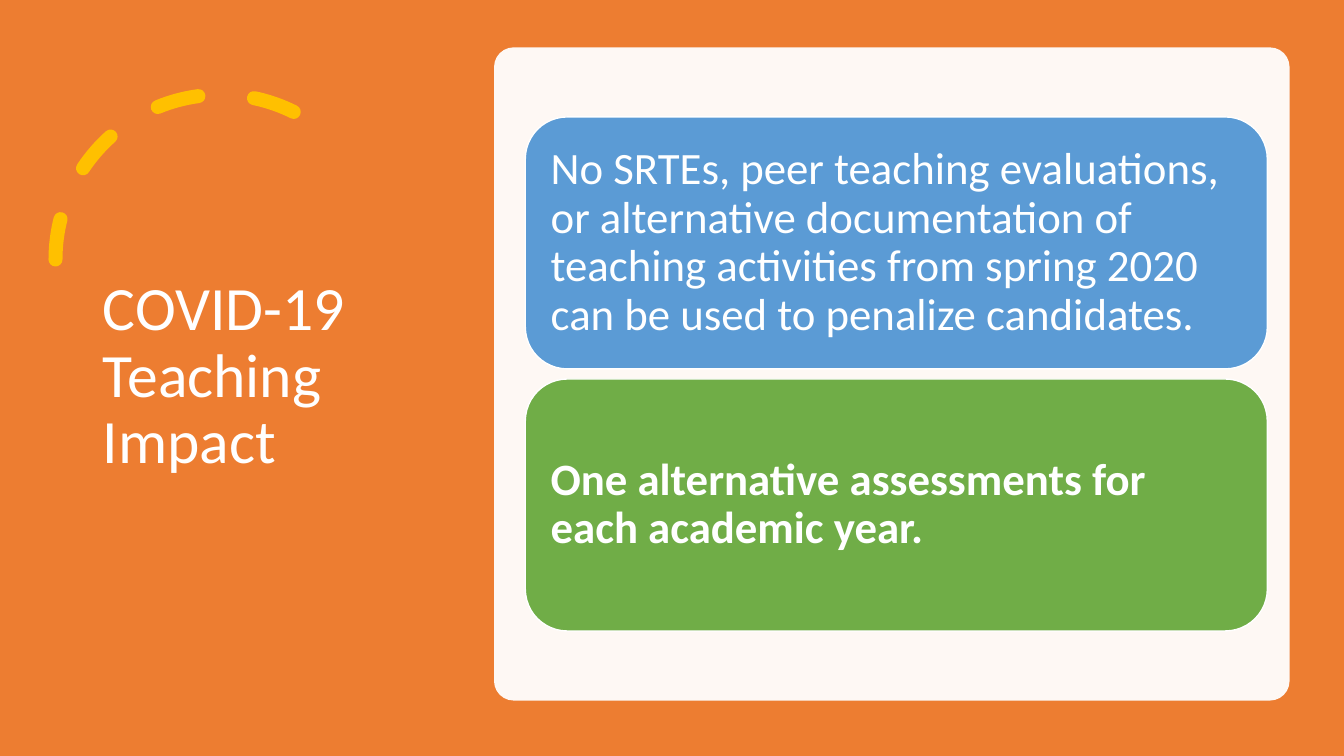
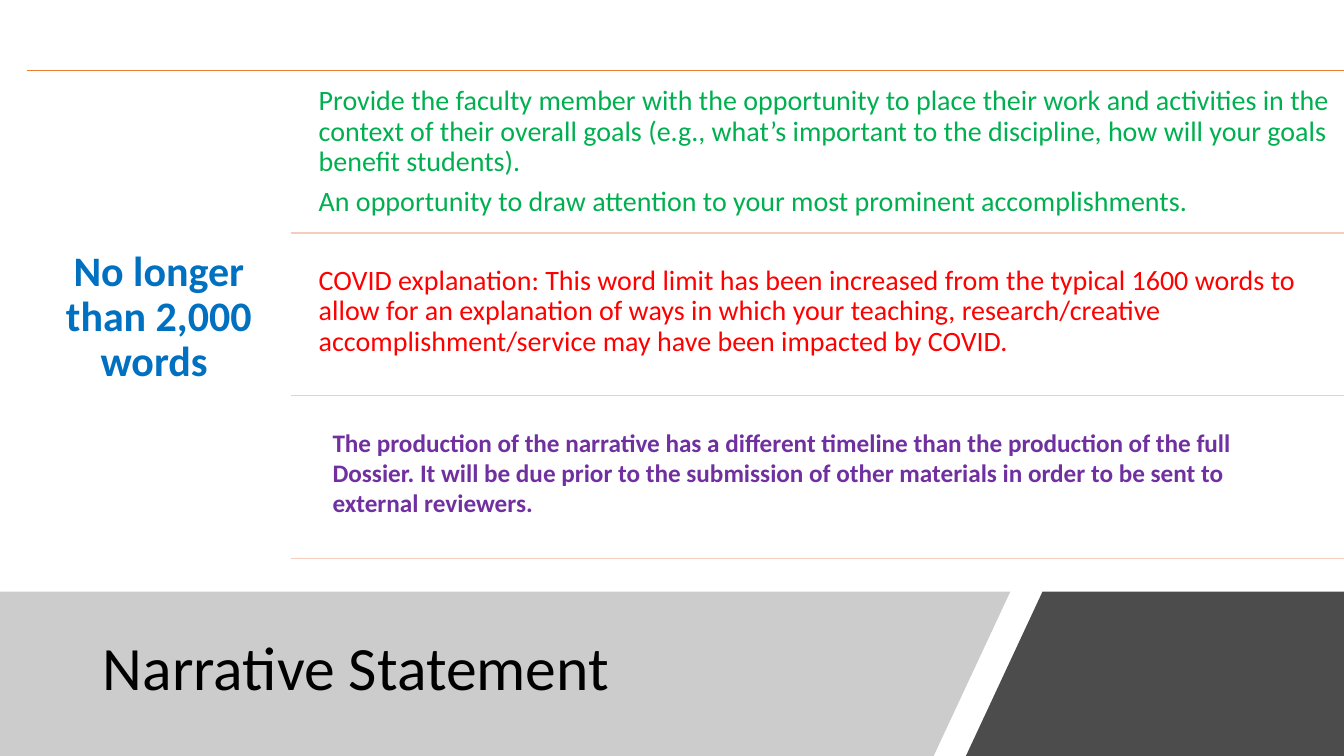
from pptx import Presentation
from pptx.dml.color import RGBColor as Rgb
from pptx.enum.dml import MSO_LINE as Dash
from pptx.enum.shapes import MSO_CONNECTOR as Join, MSO_SHAPE as Kind
from pptx.enum.text import MSO_ANCHOR as Anchor, MSO_AUTO_SIZE as Fit, PP_ALIGN as Align
from pptx.oxml.ns import qn
from pptx.oxml.xmlchemy import OxmlElement as Node
from pptx.util import Inches, Pt

WHITE = Rgb(0xFF, 0xFF, 0xFF)
BLACK = Rgb(0x00, 0x00, 0x00)
GRAY = Rgb(0x80, 0x80, 0x80)
ORANGE = Rgb(0xED, 0x7D, 0x31)
GOLD = Rgb(0xFF, 0xC0, 0x00)
SKY = Rgb(0x5B, 0x9B, 0xD5)
LEAF = Rgb(0x70, 0xAD, 0x47)
BLUE = Rgb(0x00, 0x70, 0xC0)
GREEN = Rgb(0x00, 0xB0, 0x50)
RED = Rgb(0xFF, 0x00, 0x00)
PURPLE = Rgb(0x70, 0x30, 0xA0)
PEACH = Rgb(0xF6, 0xCC, 0xBE)

FONT = "Calibri"
PAGE = (0, 0, Inches(13.33), Inches(7.5))

CARDS = [
    ("No SRTEs, peer teaching evaluations, or alternative documentation of teaching "
     "activities from spring 2020 can be used to penalize candidates.", SKY, False),
    ("One alternative assessments for each academic year.", LEAF, True),
]
WIDE = (21.52, 78.48, 95.5)
ROWS = [
    (["Provide the faculty member with the opportunity to place their work and activities "
      "in the context of their overall goals (e.g., what’s important to the discipline, "
      "how will your goals benefit students).",
      "An opportunity to draw attention to your most prominent accomplishments."],
     5, WIDE, 0.08, dict(size=20, color=GREEN, after=7)),
    (["COVID explanation: This word limit has been increased from the typical 1600 words "
      "to allow for an explanation of ways in which your teaching, research/creative "
      "accomplishment/service may have been impacted by COVID."],
     15.5, WIDE, 0.08, dict(size=20, color=RED)),
    (["The production of the narrative has a different timeline than the production of "
      "the full Dossier. It will be due prior to the submission of other materials in "
      "order to be sent to external reviewers."],
     16.1, (22.43, 75.5, 62.6), 0.1, dict(size=18, color=PURPLE, bold=True, space=1)),
]


def part(box, left, top, wide, high):
    x, y, w, h = box
    return (round(x + w * left / 100), round(y + h * top / 100),
            round(w * wide / 100), round(h * high / 100))


def apply(item, **style):
    for name, value in style.items():
        setattr(item, name, value)


def paint(shape, fill=None, line=None, width=1, alpha=None):
    shape.shadow.inherit = False
    if fill is None:
        shape.fill.background()
    else:
        shape.fill.solid()
        shape.fill.fore_color.rgb = fill
    if line is None:
        shape.line.fill.background()
    else:
        shape.line.color.rgb = line
        shape.line.width = Pt(width)
    if alpha is not None:
        node = Node("a:alpha")
        node.set("val", str(alpha * 1000))
        shape.element.spPr.find(qn("a:solidFill"))[0].append(node)
    return shape


def write(shape, texts, size, color, bold=False, pad=0.1, side=None,
          anchor=Anchor.MIDDLE, align=Align.LEFT, space=0.9, after=0):
    frame = shape.text_frame
    edge, rim = Inches(pad), Inches(pad if side is None else side)
    apply(frame, word_wrap=True, auto_size=Fit.NONE, vertical_anchor=anchor,
          margin_left=edge, margin_right=edge, margin_top=rim, margin_bottom=rim)
    for index, text in enumerate(texts):
        para = frame.add_paragraph() if index else frame.paragraphs[0]
        apply(para, alignment=align, line_spacing=space,
              space_before=Pt(0), space_after=Pt(after))
        run = para.add_run()
        run.text = text
        apply(run.font, name=FONT, size=Pt(size), bold=bold)
        run.font.color.rgb = color


def head(slide, box, text, color):
    title = slide.shapes.title
    apply(title, **dict(zip(("left", "top", "width", "height"), box)))
    write(title, [text], 44, color, side=0.05)
    slide.shapes.element.append(title.element)


def rule(slide, box, left, top, color):
    x, y, w, _ = part(box, left, top, 100 - left, 0)
    line = slide.shapes.add_connector(Join.STRAIGHT, x, y, x + w, y)
    line.line.color.rgb = color
    line.line.width = Pt(1)
    line.element.spPr.append(Node("a:effectLst"))


def slab(slide, box, spots, fill, alpha):
    dots = [part(box, x, y, 0, 0)[:2] for x, y in spots]
    form = slide.shapes.build_freeform(*dots[0], scale=1.0)
    form.add_line_segments(dots[1:], close=True)
    paint(form.convert_to_shape(), fill, alpha=alpha)


def swirl(slide, box):
    arc = paint(slide.shapes.add_shape(Kind.ARC, *box), line=GOLD, width=10)
    arc.adjustments[0] = 146.13
    arc.adjustments[1] = 0
    arc.line.dash_style = Dash.DASH
    shell = arc.element.spPr
    shell.find(qn("a:xfrm")).set("flipH", "1")
    shell.find(qn("a:ln")).set("cap", "rnd")


def panel(slide, box):
    back = paint(slide.shapes.add_shape(Kind.ROUNDED_RECTANGLE, *box), WHITE, alpha=95)
    back.adjustments[0] = 0.03
    for index, (text, fill, bold) in enumerate(CARDS):
        spot = part(box, 3.93, 10.65 + 40.12 * index, 93.28, 38.58)
        card = paint(slide.shapes.add_shape(Kind.ROUNDED_RECTANGLE, *spot), fill, WHITE)
        write(card, [text], 32, WHITE, bold, pad=0.13)


def table(slide, box):
    rule(slide, box, 0, 0, ORANGE)
    label = slide.shapes.add_textbox(*part(box, 0, 0, 20, 101.45))
    write(label, ["No longer than 2,000 words "], 30, BLUE, True, pad=0.12,
          align=Align.CENTER)
    step = 100 / len(ROWS)
    for index, (texts, drop, (left, wide, high), pad, style) in enumerate(ROWS):
        row = part(box, 0, step * index, 100, step)
        note = slide.shapes.add_textbox(*part(row, left, drop, wide, high))
        side = 0.05 if pad == 0.1 else pad
        write(note, texts, pad=pad, side=side, anchor=Anchor.TOP, **style)
        rule(slide, row, 20, 100, PEACH)


def band(slide, box, text):
    slab(slide, box, [(0, 0), (75.17, 0), (69.47, 100), (0, 100)], GRAY, 40)
    slab(slide, box, [(77.57, 0), (100, 0), (100, 100), (71.87, 100)], BLACK, 70)
    head(slide, part(box, 6.9, 11.04, 63.32, 73.62), text, BLACK)


def impact(slide, box):
    paint(slide.shapes.add_shape(Kind.RECTANGLE, *box), ORANGE)
    swirl(slide, part(box, 4.13, 12.53, 24.53, 43.6))
    head(slide, part(box, 6.9, 9.33, 24.23, 81.2), "COVID-19 Teaching Impact", WHITE)
    panel(slide, part(box, 36.76, 6.27, 59.19, 86.4))


def story(slide, box):
    band(slide, part(box, 0, 78.27, 100, 21.73), "Narrative Statement")
    table(slide, part(box, 2.03, 9.33, 97.97, 64.53))


def main():
    deck = Presentation()
    apply(deck, slide_width=PAGE[2], slide_height=PAGE[3])
    for build in (impact, story):
        build(deck.slides.add_slide(deck.slide_layouts[5]), PAGE)
    deck.save("out.pptx")


if __name__ == "__main__":
    main()
